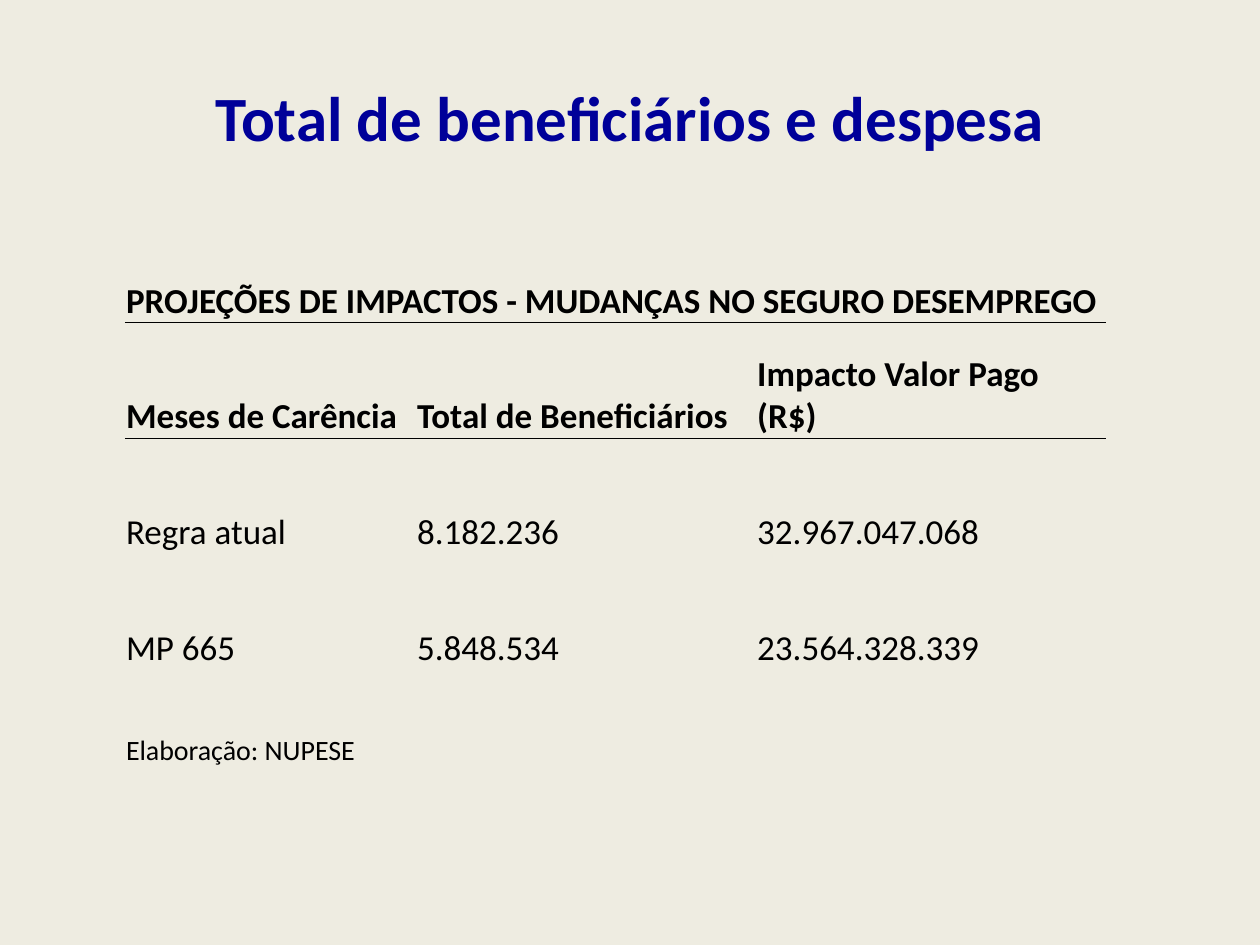
"""Build a slide with a table of projected unemployment insurance beneficiaries and spending."""
from dataclasses import dataclass

from lxml import etree
from pptx import Presentation
from pptx import util as u
from pptx.dml.color import RGBColor
from pptx.enum import text
from pptx.oxml import ns


@dataclass(frozen=True)
class Theme:
    font: str = "Calibri"
    back: str = "EEECE1"
    head: str = "000099"
    ink: str = "000000"
    title: int = 36
    body: int = 20
    note: int = 16
    rule: float = 0.5


@dataclass(frozen=True)
class Row:
    cells: tuple[str, ...]
    high: float
    size: int
    bold: bool = False
    span: int = 1
    top: bool = False
    base: bool = False


THEME = Theme()
WIDE, HIGH = 10, 7.5
COLS = (0.231, 0.27, 0.278)
LOW, TALL = 0.78, 0.92
ROWS = (
    Row(("PROJEÇÕES DE IMPACTOS - MUDANÇAS NO SEGURO DESEMPREGO",),
        LOW, THEME.body, bold=True, span=3, base=True),
    Row(("Meses de Carência", "Total de Beneficiários", "Impacto Valor Pago (R$)"),
        TALL, THEME.body, bold=True, top=True, base=True),
    Row(("Regra atual", "8.182.236", "32.967.047.068"), TALL, THEME.body, top=True),
    Row(("MP 665", "5.848.534", "23.564.328.339"), TALL, THEME.body),
    Row(("Elaboração: NUPESE",), LOW, THEME.note, span=2),
)
NO_GRID = "{2D5ABB26-0587-4C30-8999-92F81FD0307C}"


def add_run(para, words: str, size: int, color: str, bold: bool) -> None:
    run = para.add_run()
    run.text = words
    run.font.name = THEME.font
    run.font.size = u.Pt(size)
    run.font.bold = bold
    run.font.color.rgb = RGBColor.from_string(color)


def set_rule(cell, side: str, shown: bool) -> None:
    props = cell._tc.get_or_add_tcPr()
    line = etree.SubElement(props, ns.qn(f"a:ln{side}"), w=str(u.Pt(THEME.rule)))
    if shown:
        fill = etree.SubElement(line, ns.qn("a:solidFill"))
        etree.SubElement(fill, ns.qn("a:srgbClr"), val=THEME.ink)
    else:
        etree.SubElement(line, ns.qn("a:noFill"))


def add_title(slide, words: str) -> None:
    box = slide.shapes.add_textbox(
        u.Inches(0.05 * WIDE), u.Inches(0.04 * HIGH), u.Inches(0.9 * WIDE), u.Inches(1.25))
    frame = box.text_frame
    frame.word_wrap = True
    frame.vertical_anchor = text.MSO_ANCHOR.MIDDLE
    para = frame.paragraphs[0]
    para.alignment = text.PP_ALIGN.CENTER
    add_run(para, words, THEME.title, THEME.head, True)


def style_cell(cell, row: Row) -> None:
    cell.margin_left = cell.margin_right = cell.margin_top = u.Inches(0.01)
    cell.margin_bottom = 0
    cell.vertical_anchor = text.MSO_ANCHOR.BOTTOM
    set_rule(cell, "T", row.top)
    set_rule(cell, "B", row.base)
    cell.fill.background()


def add_grid(slide, rows: tuple[Row, ...]) -> None:
    frame = slide.shapes.add_table(
        len(rows), len(COLS), u.Inches(0.99), u.Inches(1.78),
        u.Inches(sum(COLS) * WIDE), u.Inches(sum(row.high for row in rows)))
    grid = frame.table
    grid.first_row = grid.horz_banding = False
    grid._tbl.tblPr.find(ns.qn("a:tableStyleId")).text = NO_GRID
    for col, share in zip(grid.columns, COLS):
        col.width = u.Inches(share * WIDE)
    for index, row in enumerate(rows):
        grid.rows[index].height = u.Inches(row.high)
        for place in range(len(COLS)):
            style_cell(grid.cell(index, place), row)
        if row.span > 1:
            grid.cell(index, 0).merge(grid.cell(index, row.span - 1))
        for place, words in enumerate(row.cells):
            para = grid.cell(index, place).text_frame.paragraphs[0]
            add_run(para, words, row.size, THEME.ink, row.bold)


def main() -> None:
    deck = Presentation()
    deck.slide_width, deck.slide_height = u.Inches(WIDE), u.Inches(HIGH)
    slide = deck.slides.add_slide(deck.slide_layouts[6])
    slide.background.fill.solid()
    slide.background.fill.fore_color.rgb = RGBColor.from_string(THEME.back)
    add_title(slide, "Total de beneficiários e despesa")
    add_grid(slide, ROWS)
    deck.save("out.pptx")


if __name__ == "__main__":
    main()
